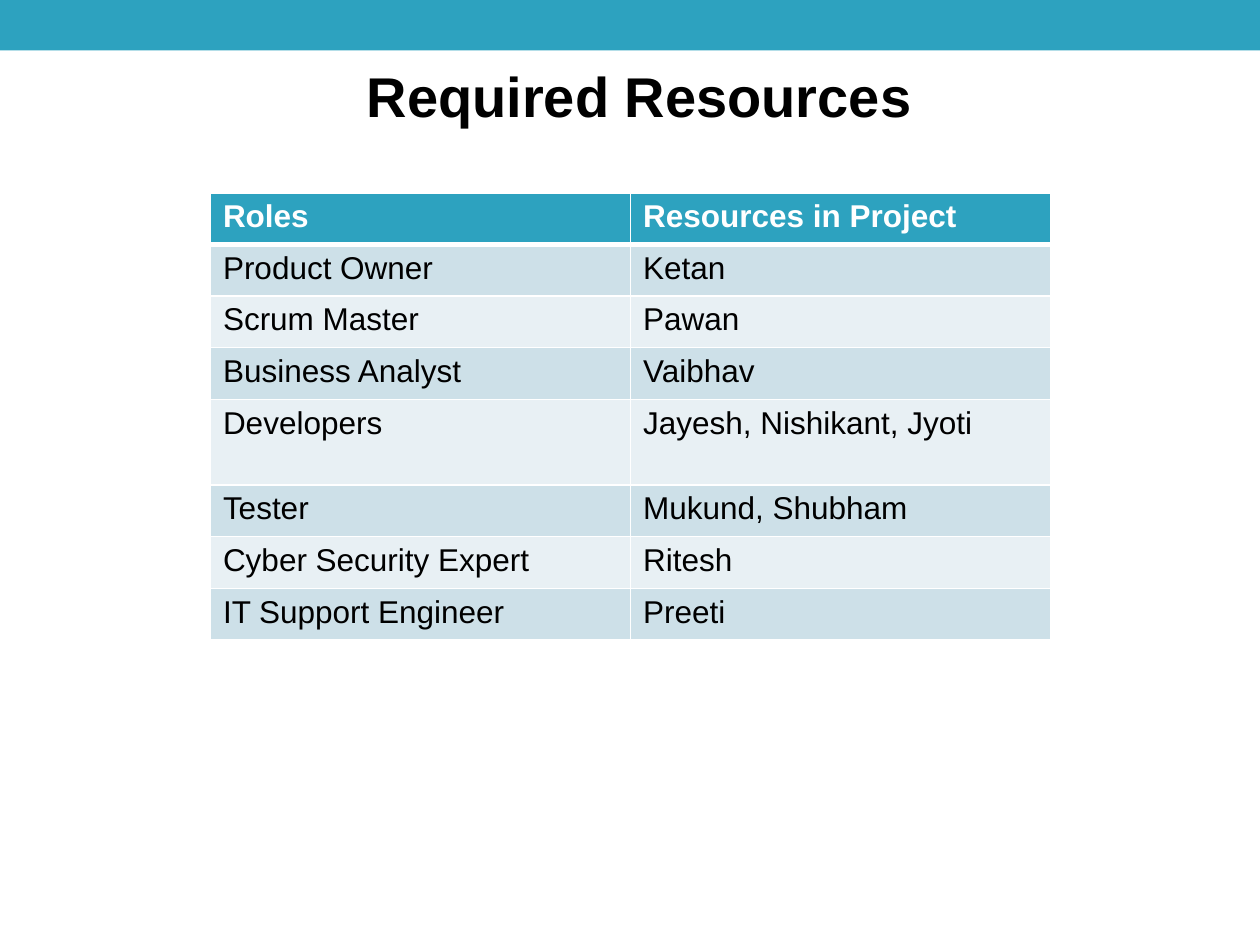
from lxml.etree import SubElement
from pptx import Presentation
from pptx.dml.color import RGBColor
from pptx.enum.shapes import MSO_SHAPE as Shape
from pptx.enum.text import MSO_AUTO_SIZE as AutoSize, PP_ALIGN as Align
from pptx.oxml.ns import qn
from pptx.util import Inches, Pt

TEAL = RGBColor(0x2D, 0xA2, 0xBF)
BAND_DARK = RGBColor(0xCD, 0xE0, 0xE8)
BAND_LIGHT = RGBColor(0xE8, 0xF0, 0xF4)
WHITE = RGBColor(0xFF, 0xFF, 0xFF)
BLACK = RGBColor(0, 0, 0)

ROLES = [
    ("Roles", "Resources in Project"),
    ("Product Owner", "Ketan"),
    ("Scrum Master", "Pawan"),
    ("Business Analyst", "Vaibhav"),
    ("Developers", "Jayesh, Nishikant, Jyoti"),
    ("Tester", "Mukund, Shubham"),
    ("Cyber Security Expert", "Ritesh"),
    ("IT Support Engineer", "Preeti"),
]
ROW_HEIGHT, TALL_HEIGHT = 0.41, 0.68
TALL_ROW = 4


def write(para, text, color, **formats):
    span = para.add_run()
    span.text = text
    for name, value in {"name": "Arial", **formats}.items():
        setattr(span.font, name, value)
    span.font.color.rgb = color


def add_band(page):
    band = page.shapes.add_shape(Shape.RECTANGLE, 0, 0, Inches(10), Inches(0.4))
    band.shadow.inherit = False
    band.fill.solid()
    band.fill.fore_color.rgb = TEAL
    band.line.fill.background()


def add_title(page, text):
    box = page.shapes.add_textbox(Inches(1.61), Inches(0.44), Inches(6.93), Inches(0.64))
    frame = box.text_frame
    frame.word_wrap = True
    frame.auto_size = AutoSize.SHAPE_TO_FIT_TEXT
    para = frame.paragraphs[0]
    para.alignment = Align.CENTER
    write(para, text, BLACK, size=Pt(32), bold=True)


def set_borders(cell, **widths):
    properties = cell._tc.get_or_add_tcPr()
    for side in "LRTB":
        line = SubElement(properties, qn(f"a:ln{side}"), w=str(Pt(widths.get(side, 1))))
        fill = SubElement(line, qn("a:solidFill"))
        SubElement(fill, qn("a:srgbClr"), val=str(WHITE))


def add_roles_table(page):
    heights = [TALL_HEIGHT if row == TALL_ROW else ROW_HEIGHT for row in range(len(ROLES))]
    table = page.shapes.add_table(
        len(ROLES), 2, Inches(1.67), Inches(1.53), Inches(6.67), Inches(sum(heights))
    ).table
    for row, (height, texts) in enumerate(zip(heights, ROLES)):
        table.rows[row].height = Inches(height)
        header = row == 0
        band = BAND_DARK if row % 2 else BAND_LIGHT
        # The header is set off by a heavier rule
        rule = {"B": 3} if header else {"T": 3} if row == 1 else {}
        for column, text in enumerate(texts):
            cell = table.cell(row, column)
            set_borders(cell, **rule)
            cell.fill.solid()
            cell.fill.fore_color.rgb = TEAL if header else band
            write(cell.text_frame.paragraphs[0], text, WHITE if header else BLACK,
                  size=Pt(18), bold=header)


def main():
    deck = Presentation()
    deck.slide_width, deck.slide_height = Inches(10), Inches(7.5)
    page = deck.slides.add_slide(deck.slide_layouts[6])
    add_band(page)
    add_roles_table(page)
    add_title(page, "Required Resources")
    deck.save("out.pptx")


if __name__ == "__main__":
    main()
